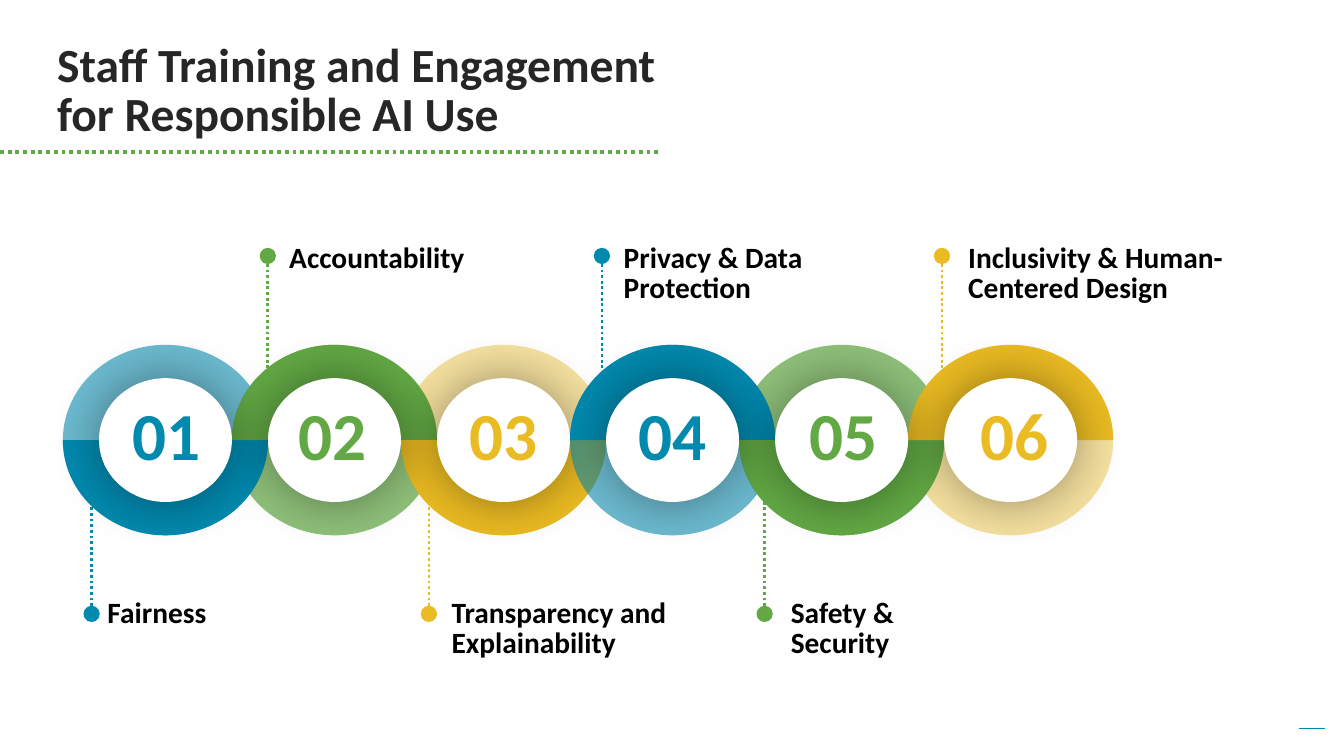
from dataclasses import dataclass

from pptx import Presentation
from pptx.dml.color import RGBColor as Rgb
from pptx.enum.dml import MSO_LINE as Dash
from pptx.enum.shapes import MSO_CONNECTOR as Conn, MSO_SHAPE as Shape
from pptx.enum.text import MSO_ANCHOR as Anchor, MSO_AUTO_SIZE as Auto, PP_ALIGN as Align
from pptx.oxml.ns import qn
from pptx.util import Cm, Pt
from lxml.etree import SubElement as Sub


@dataclass(frozen=True)
class Theme:
    font: str = "Calibri"
    blue: str = "0289AE"
    green: str = "62A844"
    gold: str = "EABB22"
    white: str = "FFFFFF"
    ink: str = "262626"
    black: str = "000000"
    # Type size and line spacing in points
    title: tuple = (34, 35.2)
    label: tuple = (21, 21.2)
    digit: tuple = (48, 30.2)


T = Theme()

# Ring geometry in cm
FIRST, STEP, MID = 4.17, 4.26, 11.09
RING = (5.17, 4.8)
DISC = (3.35, 3.12)
DOT = 0.41
BEND = 0.55  # pull of a curve towards its corner for a quarter ellipse

# Hue and opacity of the pale half, repeating every three rings
HUES = [(T.blue, 58), (T.green, 71), (T.gold, 43)]

# Label, label left, label width, label height, pin x, number left
STEPS = [
    ("Fairness", 2.46, 7.75, 1.02, 2.31, 2.69),
    ("Accountability", 7.04, 4.98, 1.02, 6.75, 6.88),
    ("Transparency and Explainability", 11.13, 6.43, 1.75, 10.81, 11.18),
    ("Privacy & Data Protection", 15.47, 5.82, 1.75, 15.17, 15.45),
    ("Safety & Security", 19.68, 4.37, 1.75, 19.27, 19.76),
    ("Inclusivity & Human-Centered Design", 24.15, 7.52, 1.75, 23.74, 24.05),
]


def put(item, vals):
    for key, val in vals.items():
        setattr(item, key, val)


def text(page, words, box, kind, hue, align=Align.LEFT, grow=Auto.SHAPE_TO_FIT_TEXT):
    size, lead = kind
    frame = page.shapes.add_textbox(*map(Cm, box)).text_frame
    put(frame, {"word_wrap": True, "auto_size": grow,
                "vertical_anchor": Anchor.TOP, "text": words})
    para = frame.paragraphs[0]
    put(para, {"alignment": align, "line_spacing": Pt(lead)})
    put(para.font, {"name": T.font, "size": Pt(size), "bold": True})
    para.font.color.rgb = Rgb.from_string(hue)


def line(page, start, end, hue, width, dash=None):
    link = page.shapes.add_connector(Conn.STRAIGHT, *map(Cm, start + end))
    put(link.line, {"width": Pt(width), "dash_style": dash})
    link.line.color.rgb = Rgb.from_string(hue)
    Sub(link.element.spPr, qn("a:effectLst"))


def paint(shape, hue, alpha=100):
    shape.fill.solid()
    shape.fill.fore_color.rgb = Rgb.from_string(hue)
    shape.line.fill.background()
    shape.shadow.inherit = False
    if alpha < 100:
        tint = shape.element.spPr.find(qn("a:solidFill"))[0]
        Sub(tint, qn("a:alpha"), val=str(alpha * 1000))


def oval(page, mid, size, hue, alpha=100):
    spot = [c - s / 2 for c, s in zip(mid, size)]
    shape = page.shapes.add_shape(Shape.OVAL, *map(Cm, (*spot, *size)))
    paint(shape, hue, alpha)
    return shape


def curve(leg, start, corner, end):
    """Turn a straight leg into a quarter ellipse that bends to the corner."""
    leg.tag = qn("a:cubicBezTo")
    leg.remove(leg[0])
    pulls = [[p + BEND * (c - p) for p, c in zip(spot, corner)] for spot in (start, end)]
    for x, y in (*pulls, end):
        Sub(leg, qn("a:pt"), x=str(round(x)), y=str(round(y)))


def half(page, mid, side, hue):
    """Half an ellipse; side is 1 below the middle and -1 above it."""
    left, right = (Cm(mid[0] + way * RING[0] / 2) for way in (-1, 1))
    base, peak = Cm(mid[1]), Cm(mid[1] + side * RING[1] / 2)
    form = page.shapes.build_freeform(left, base)
    form.add_line_segments([(right, base), (Cm(mid[0]), peak), (left, base)], close=True)
    shape = form.convert_to_shape()
    spots = [(int(p.get("x")), int(p.get("y"))) for p in shape.element.spPr.iter(qn("a:pt"))]
    legs = list(shape.element.spPr.iter(qn("a:lnTo")))
    for n in (1, 2):
        start, end = spots[n], spots[n + 1]
        curve(legs[n], start, (spots[2 - n if n == 1 else 3][0], spots[2][1]), end)
    paint(shape, hue)


def disc(page, mid):
    shape = oval(page, mid, DISC, T.white)
    glow = Sub(shape.element.spPr.find(qn("a:effectLst")), qn("a:outerShdw"),
               blurRad=str(Pt(37)), dist="0", dir="0", algn="ctr", rotWithShape="0")
    tint = Sub(glow, qn("a:srgbClr"), val=T.black)
    Sub(tint, qn("a:alpha"), val="40000")


def side_of(num):
    return -1 if num % 2 else 1


def pin(page, num):
    """Dotted lead and dot on the label side of a ring."""
    hue, x = HUES[num % 3][0], STEPS[num][4]
    if side_of(num) < 0:
        dot, near, far = 6.45, 6.65, 10.03
    else:
        dot, near, far = 15.47, 15.27, 11.89
    line(page, (x, near), (x, far), hue, 2, Dash.ROUND_DOT)
    oval(page, (x, dot), (DOT, DOT), hue)


def trio(page, first):
    """Three linked rings, layered so that they overlap like a chain."""
    mids = [(FIRST + STEP * (first + n), MID) for n in range(3)]
    for n in (1, 2, 0):
        oval(page, mids[n], RING, *HUES[n])
    for part, n in (("half", 0), ("half", 1), ("disc", 0),
                    ("half", 2), ("disc", 2), ("disc", 1)):
        if part == "half":
            half(page, mids[n], side_of(first + n), HUES[n][0])
        else:
            disc(page, mids[n])


def main():
    deck = Presentation()
    put(deck, {"slide_width": Cm(33.87), "slide_height": Cm(19.05)})
    page = deck.slides.add_slide(deck.slide_layouts[6])

    # Heading and rules
    line(page, (33.38, 18.36), (32.74, 18.36), T.blue, 0.75)
    text(page, "Staff Training and Engagement for Responsible AI Use",
         (1.19, 0.95, 16.46, 3.1), T.title, T.ink, grow=Auto.NONE)
    line(page, (0, 3.82), (16.57, 3.82), T.green, 2.75, Dash.ROUND_DOT)

    # Pins and labels
    for num in range(len(STEPS)):
        pin(page, num)
    for num, (words, left, wide, high, *_) in enumerate(STEPS):
        top = 6.04 if side_of(num) < 0 else 14.99
        text(page, words, (left, top, wide, high), T.label, T.black)

    # Ring chain
    for first in (0, 3):
        trio(page, first)

    # Numbers
    for num, step in enumerate(STEPS):
        text(page, f"{num + 1:02}", (step[5], 10.75, 3.02, 1.35),
             T.digit, HUES[num % 3][0], Align.CENTER)

    deck.save("out.pptx")


if __name__ == "__main__":
    main()
